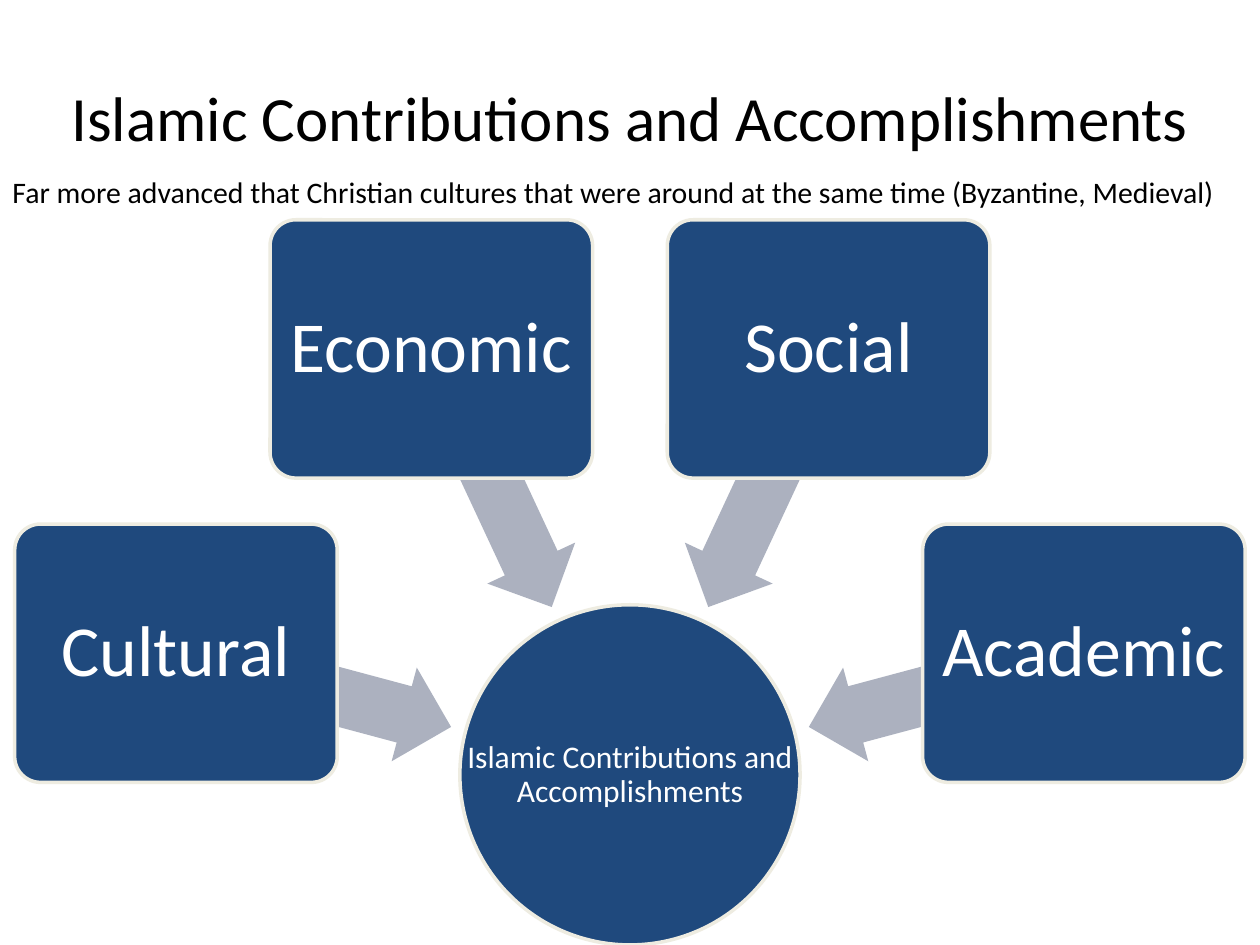
from dataclasses import dataclass
from math import cos, radians, sin

from pptx import Presentation
from pptx.dml.color import RGBColor
from pptx.enum.shapes import MSO_SHAPE
from pptx.enum.text import MSO_ANCHOR, PP_ALIGN
from pptx.shapes.autoshape import Shape
from pptx.shapes.shapetree import SlideShapes
from pptx.util import Inches, Pt

NAVY = RGBColor(0x1F, 0x49, 0x7D)
CREAM = RGBColor(0xEE, 0xEC, 0xE1)
GREY = RGBColor(0xAC, 0xB1, 0xBF)
WHITE = RGBColor(0xFF, 0xFF, 0xFF)
BLACK = RGBColor(0x00, 0x00, 0x00)

TOPIC = "Islamic Contributions and Accomplishments"
HUB_X, HUB_Y, HUB_SIZE = 5, 6.15, 2.7
ARROW_RADIUS, BOX_RADIUS = 2.59, 3.73


@dataclass(frozen=True)
class Branch:
    label: str
    angle: int  # clockwise degrees from the hub's right-hand side


BRANCHES = [
    Branch("Cultural", 195),
    Branch("Economic", 245),
    Branch("Social", 295),
    Branch("Academic", 345),
]


def write(shape: Shape, text: str, size: float, color: RGBColor,
          align: PP_ALIGN = PP_ALIGN.CENTER, spacing: float = 1.0) -> None:
    frame = shape.text_frame
    frame.word_wrap = True
    frame.text = text
    paragraph = frame.paragraphs[0]
    paragraph.alignment = align
    paragraph.line_spacing = spacing
    paragraph.font.name = "Calibri"
    paragraph.font.size = Pt(size)
    paragraph.font.color.rgb = color


def write_centred(shape: Shape, text: str, size: float, inset: float) -> None:
    frame = shape.text_frame
    frame.margin_left = frame.margin_right = Inches(inset)
    frame.margin_top = frame.margin_bottom = Inches(inset)
    frame.vertical_anchor = MSO_ANCHOR.MIDDLE
    write(shape, text, size, WHITE, spacing=0.9)


def add_polar(shapes: SlideShapes, kind: MSO_SHAPE, radius: float, angle: float,
              width: float, height: float, fill: RGBColor) -> Shape:
    """Add a shape centred at a distance and angle from the hub's centre."""
    x = HUB_X + radius * cos(radians(angle))
    y = HUB_Y + radius * sin(radians(angle))
    shape = shapes.add_shape(kind, Inches(x - width / 2), Inches(y - height / 2),
                             Inches(width), Inches(height))
    shape.shadow.inherit = False
    shape.fill.solid()
    shape.fill.fore_color.rgb = fill
    return shape


def outline(shape: Shape) -> None:
    shape.line.color.rgb = CREAM
    shape.line.width = Pt(2)


def add_hub(shapes: SlideShapes) -> None:
    hub = add_polar(shapes, MSO_SHAPE.OVAL, 0, 0, HUB_SIZE, HUB_SIZE, NAVY)
    outline(hub)
    # The label needs the full width of the circle, so it has its own box.
    label = shapes.add_textbox(hub.left, hub.top, hub.width, hub.height)
    write_centred(label, TOPIC, 18, 0.01)


def add_branch(shapes: SlideShapes, branch: Branch) -> None:
    arrow = add_polar(shapes, MSO_SHAPE.LEFT_ARROW, ARROW_RADIUS, branch.angle,
                      2.24, 0.77, GREY)
    arrow.adjustments[0] = 0.6
    arrow.adjustments[1] = 0.5
    arrow.line.fill.background()
    arrow.rotation = branch.angle

    box = add_polar(shapes, MSO_SHAPE.ROUNDED_RECTANGLE, BOX_RADIUS, branch.angle,
                    2.56, 2.05, NAVY)
    box.adjustments[0] = 0.1
    outline(box)
    write_centred(box, branch.label, 41, 0.03)


def main() -> None:
    presentation = Presentation()
    presentation.slide_width = Inches(10)
    presentation.slide_height = Inches(7.5)
    slide = presentation.slides.add_slide(presentation.slide_layouts[5])
    shapes = slide.shapes

    title = shapes.title
    title.left, title.top = Inches(0), Inches(0.3)
    title.width, title.height = Inches(10), Inches(1.25)
    title.text_frame.vertical_anchor = MSO_ANCHOR.MIDDLE
    write(title, TOPIC, 36, BLACK)

    add_hub(shapes)
    for branch in BRANCHES:
        add_branch(shapes, branch)

    comparison = shapes.add_textbox(Inches(0), Inches(1.33), Inches(10.67), Inches(0.96))
    write(comparison, "Far more advanced that Christian cultures that were around "
          "at the same time (Byzantine, Medieval)", 17, BLACK, PP_ALIGN.LEFT)

    presentation.save("out.pptx")


if __name__ == "__main__":
    main()
